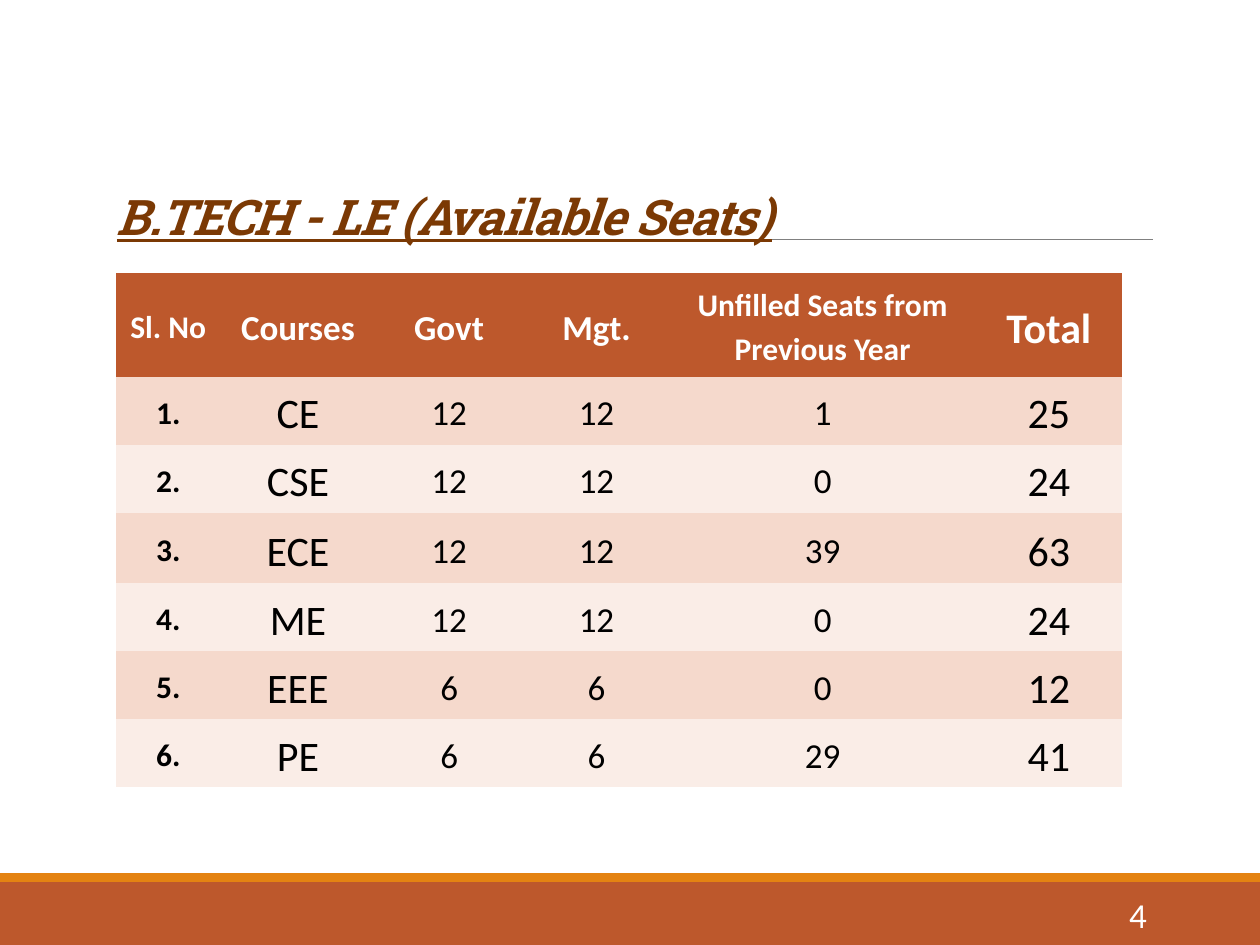
"""Build the slide listing available B.Tech lateral entry seats."""
from dataclasses import dataclass

import pptx
import pptx.dml.color
import pptx.enum.shapes
import pptx.enum.text
import pptx.oxml
import pptx.util

Inches = pptx.util.Inches
Pt = pptx.util.Pt
ALIGN = pptx.enum.text.PP_ALIGN
ANCHOR = pptx.enum.text.MSO_ANCHOR

RUST, ORANGE, BROWN, GREY = "BD582C", "E48312", "7B3904", "808080"
WHITE, BLACK = "FFFFFF", "000000"
BANDS = ("F5D9CC", "FAEDE7")
NO_GRID_STYLE = "{2D5ABB26-0587-4C30-8999-92F81FD0307C}"


@dataclass
class Bar:
    top: float
    height: float
    color: str


@dataclass
class Column:
    title: str
    width: float
    title_size: int
    size: int
    bold: bool = False


BARS = [Bar(7, 0.5, RUST), Bar(6.93, 0.07, ORANGE)]
COLUMNS = [
    Column("Sl. No", 0.83, 18, 18, True),
    Column("Courses", 1.23, 20, 24),
    Column("Govt", 1.17, 20, 20),
    Column("Mgt.", 1.17, 20, 20),
    Column("Unfilled Seats from Previous Year", 2.42, 18, 20),
    Column("Total", 1.17, 24, 24),
]
SEATS = [
    ("CE", 12, 12, 1),
    ("CSE", 12, 12, 0),
    ("ECE", 12, 12, 39),
    ("ME", 12, 12, 0),
    ("EEE", 6, 6, 0),
    ("PE", 6, 6, 29),
]
ROW_HEIGHTS = [0.82, 0.54, 0.54, 0.56, 0.54, 0.54, 0.54]


def rgb(color: str):
    return pptx.dml.color.RGBColor.from_string(color)


def format_text(tf, size: int, color: str, align, bold: bool = False, font: str = "Calibri"):
    p = tf.paragraphs[0]
    p.alignment = align
    r = p.runs[0]
    r.font.name, r.font.size, r.font.bold = font, Pt(size), bold
    r.font.color.rgb = rgb(color)
    return p, r


def add_bar(slide, bar: Bar, width) -> None:
    sp = slide.shapes.add_shape(pptx.enum.shapes.MSO_SHAPE.RECTANGLE,
                                0, Inches(bar.top), width, Inches(bar.height))
    sp.shadow.inherit = False
    sp.fill.solid()
    sp.fill.fore_color.rgb = rgb(bar.color)
    sp.line.fill.background()


def add_rule(slide, left: float, right: float, y: float) -> None:
    s = slide.shapes.add_connector(pptx.enum.shapes.MSO_CONNECTOR.STRAIGHT,
                                   Inches(left), Inches(y), Inches(right), Inches(y))
    s.line.color.rgb = rgb(GREY)
    s.line.width = Pt(0.5)
    s._element.spPr.append(pptx.oxml.parse_xml(
        '<a:effectLst xmlns:a="http://schemas.openxmlformats.org/drawingml/2006/main"/>'))


def add_text(slide, text: str, left: float, top: float, width: float, height: float, anchor):
    tf = slide.shapes.add_textbox(Inches(left), Inches(top), Inches(width), Inches(height)).text_frame
    tf.word_wrap = True
    tf.vertical_anchor = anchor
    tf.text = text
    return tf


def fill_cell(cell, text: str, fill: str, size: int, color: str, bold: bool) -> None:
    cell.fill.solid()
    cell.fill.fore_color.rgb = rgb(fill)
    cell.vertical_anchor = ANCHOR.MIDDLE
    cell.margin_left = cell.margin_right = Inches(0.07)
    cell.margin_top = cell.margin_bottom = 0
    cell.text_frame.text = text
    p, _ = format_text(cell.text_frame, size, color, ALIGN.CENTER, bold)
    p.line_spacing = 1.15


def add_seat_table(slide, left: float, top: float) -> None:
    width = sum(c.width for c in COLUMNS)
    table = slide.shapes.add_table(len(SEATS) + 1, len(COLUMNS), Inches(left), Inches(top),
                                   Inches(width), Inches(sum(ROW_HEIGHTS))).table
    table._tbl.tblPr.find(pptx.oxml.ns.qn("a:tableStyleId")).text = NO_GRID_STYLE
    for row, height in zip(table.rows, ROW_HEIGHTS):
        row.height = Inches(height)
    for j, col in enumerate(COLUMNS):
        table.columns[j].width = Inches(col.width)
        fill_cell(table.cell(0, j), col.title, RUST, col.title_size, WHITE, True)
    for i, (course, *counts) in enumerate(SEATS, 1):
        values = (f"{i}.", course, *counts, sum(counts))
        for j, (col, value) in enumerate(zip(COLUMNS, values)):
            fill_cell(table.cell(i, j), str(value), BANDS[(i - 1) % 2], col.size, BLACK, col.bold)


def main() -> None:
    prs = pptx.Presentation()
    prs.slide_width, prs.slide_height = Inches(10), Inches(7.5)
    slide = prs.slides.add_slide(prs.slide_layouts[6])
    for bar in BARS:
        add_bar(slide, bar, prs.slide_width)
    add_rule(slide, 0.98, 9.15, 1.9)

    tf = add_text(slide, "B.TECH - LE (Available Seats)", 0.83, 0.88, 8.75, 1.12, ANCHOR.BOTTOM)
    p, r = format_text(tf, 28, BROWN, ALIGN.LEFT, True, "Roboto Slab")
    p.line_spacing = 0.85
    r.font.italic = r.font.underline = True
    r.font._element.set("spc", "-50")

    add_seat_table(slide, 0.92, 2.17)
    tf = add_text(slide, "4", 8.12, 7.06, 1.08, 0.4, ANCHOR.MIDDLE)
    format_text(tf, 20, WHITE, ALIGN.RIGHT)
    prs.save("out.pptx")


if __name__ == "__main__":
    main()
